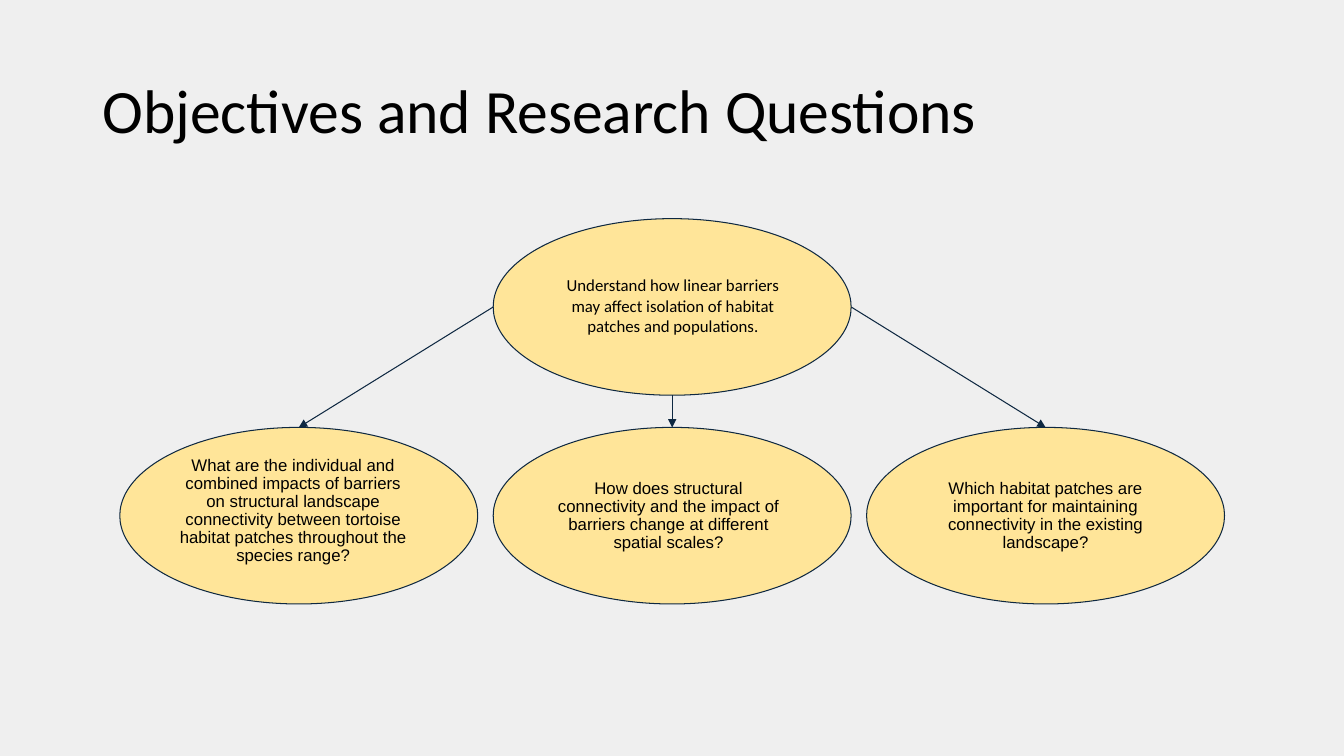
from lxml import etree
from pptx import Presentation
from pptx.dml.color import RGBColor
from pptx.enum.shapes import MSO_CONNECTOR, MSO_SHAPE
from pptx.enum.text import MSO_ANCHOR, PP_ALIGN
from pptx.oxml.ns import qn
from pptx.util import Cm, Pt

ELLIPSE = MSO_SHAPE.OVAL
STRAIGHT = MSO_CONNECTOR.STRAIGHT
MIDDLE = MSO_ANCHOR.MIDDLE
CENTER = PP_ALIGN.CENTER

BACKGROUND, YELLOW, NAVY, BLACK = "EFEFEF", "FFE599", "0E2841", "000000"
WIDTH, HEIGHT = 9.02, 4.45
LEFT, PITCH = 3.02, 9.41
OBJECTIVE_TOP, QUESTION_TOP = 5.51, 10.77


def color(value):
    return RGBColor.from_string(value)


def write(paragraph, text, font_name, size, line_spacing):
    paragraph.line_spacing = line_spacing
    run = paragraph.add_run()
    run.text = text
    run.font.name = font_name
    run.font.size = Pt(size)
    run.font.color.rgb = color(BLACK)


presentation = Presentation()
presentation.slide_width = Cm(33.87)
presentation.slide_height = Cm(19.05)
slide = presentation.slides.add_slide(presentation.slide_layouts[5])
slide.background.fill.solid()
slide.background.fill.fore_color.rgb = color(BACKGROUND)

title = slide.shapes.title
title.left, title.top, title.width, title.height = Cm(2.33), Cm(1.01), Cm(29.21), Cm(3.68)
title.text_frame.vertical_anchor = MIDDLE
title_paragraph = title.text_frame.paragraphs[0]
title_paragraph.alignment = PP_ALIGN.LEFT
write(title_paragraph, "Objectives and Research Questions", "Calibri", 44, 0.9)

ellipses = []
for column, top in [(1, OBJECTIVE_TOP), (0, QUESTION_TOP), (1, QUESTION_TOP), (2, QUESTION_TOP)]:
    ellipse = slide.shapes.add_shape(
        ELLIPSE, Cm(LEFT + column * PITCH), Cm(top), Cm(WIDTH), Cm(HEIGHT))
    ellipse.shadow.inherit = False
    ellipse.fill.solid()
    ellipse.fill.fore_color.rgb = color(YELLOW)
    ellipse.line.color.rgb = color(NAVY)
    ellipse.line.width = Pt(0.75)
    ellipses.append(ellipse)

statements = [
    (14, 6.12, 5.92, 3.15, "Calibri", 1.0,
     "Understand how linear barriers may affect isolation of habitat patches and populations."),
    (4.19, 11.15, 6.4, 3.45, "Arial", 0.9,
     "What are the individual and combined impacts of barriers on structural landscape "
     "connectivity between tortoise habitat patches throughout the species range?"),
    (13.79, 11.43, 6.12, 3.15, "Arial", 0.9,
     "How does structural connectivity and the impact of barriers change at different "
     "spatial scales?"),
    (23.29, 11.43, 6.12, 3.15, "Arial", 0.9,
     "Which habitat patches are important for maintaining connectivity in the existing "
     "landscape?"),
]
for left, top, width, height, font_name, line_spacing, text in statements:
    text_box = slide.shapes.add_textbox(Cm(left), Cm(top), Cm(width), Cm(height))
    frame = text_box.text_frame
    frame.word_wrap = True
    frame.vertical_anchor = MIDDLE
    frame.margin_left = frame.margin_right = Cm(0.25)
    frame.margin_top = frame.margin_bottom = Cm(0.25)
    frame.paragraphs[0].alignment = CENTER
    write(frame.paragraphs[0], text, font_name, 12, line_spacing)

objective, *questions = ellipses
middle = objective.top + objective.height // 2
starts = [
    (objective.left, middle),
    (objective.left + objective.width // 2, objective.top + objective.height),
    (objective.left + objective.width, middle),
]
for (start_x, start_y), question in zip(starts, questions):
    arrow = slide.shapes.add_connector(
        STRAIGHT, start_x, start_y, question.left + question.width // 2, question.top)
    arrow.end_connect(question, 0)
    arrow.line.color.rgb = color(NAVY)
    arrow.line.width = Pt(0.75)
    etree.SubElement(arrow.line._get_or_add_ln(), qn("a:tailEnd"), type="triangle")
    etree.SubElement(arrow._element.spPr, qn("a:effectLst"))

presentation.save("out.pptx")
